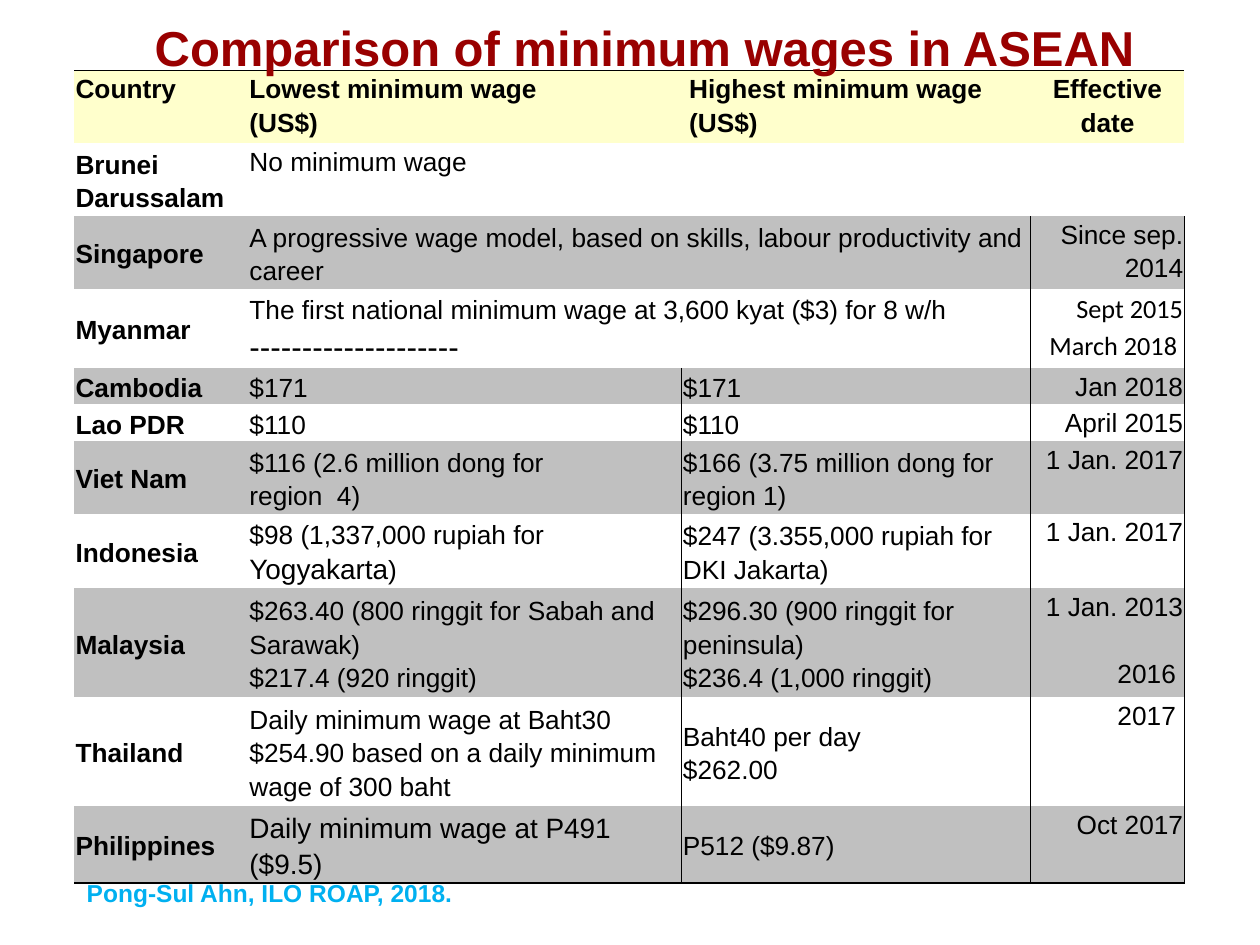
"""Build a slide that compares minimum wages across ASEAN countries."""
from dataclasses import dataclass
from typing import Any, Optional

import pptx
import pptx.dml.color
import pptx.enum.text
import pptx.oxml
import pptx.oxml.ns
import pptx.util

Pt = pptx.util.Pt
ALIGN = pptx.enum.text.PP_ALIGN
ANCHOR = pptx.enum.text.MSO_ANCHOR


@dataclass(frozen=True)
class Theme:
    """Colours, fonts and type sizes of the slide."""
    ink: str = "000000"
    title: str = "990000"
    source: str = "00B0F0"
    header: str = "FFFFCC"
    grey: str = "C0C0C0"
    white: str = "FFFFFF"
    font: str = "Arial"
    alternate_font: str = "Calibri"
    title_size: float = 28
    source_size: float = 14
    body_size: float = 15
    large_size: float = 16
    dash_size: float = 18


THEME = Theme()


@dataclass(frozen=True)
class Span:
    """A stretch of text with one size and font."""
    text: str
    size: float = THEME.body_size
    font: str = THEME.font


@dataclass(frozen=True)
class Line:
    """A paragraph made of spans."""
    spans: tuple[Span, ...]
    before: float = 0


@dataclass(frozen=True)
class Entry:
    """The lines of one table cell."""
    lines: tuple[Line, ...]
    anchor: Any = ANCHOR.MIDDLE


@dataclass(frozen=True)
class Row:
    """One country with its wages and effective date."""
    height: float
    name: str
    wages: tuple[Entry, ...]
    date: Optional[Entry]


def entry(*texts: str, anchor: Any = ANCHOR.MIDDLE, **style: Any) -> Entry:
    """Return an entry with one uniformly styled line per text."""
    return Entry(tuple(Line((Span(text, **style),)) for text in texts), anchor)


def date(*texts: str, **style: Any) -> Entry:
    """Return an entry set at the top of its cell."""
    return entry(*texts, anchor=ANCHOR.TOP, **style)


COLUMNS = (99.4, 247.7, 3.6, 195.8, 87.8)
TABLE_LEFT, TABLE_TOP = 42.5, 40.3
HEADER_COLUMNS = ((0, 0), (1, 2), (3, 3), (4, 4))
PAIRED_COLUMNS = ((0, 0), (1, 1), (2, 3), (4, 4))
JOINED_COLUMNS = ((0, 0), (1, 3), (4, 4))
HEADER_HEIGHT = 41.6
HEADERS = (entry("Country"), entry("Lowest minimum wage", "(US$)"),
           entry("Highest minimum wage (US$)"), entry("Effective date"))
ROWS = (
    Row(41.6, "Brunei Darussalam", (entry("No minimum wage", anchor=ANCHOR.TOP),), None),
    Row(41.6, "Singapore",
        (entry("A progressive wage model, based on skills, labour productivity and career"),),
        date("Since sep. 2014")),
    Row(45.2, "Myanmar",
        (Entry((Line((Span("The first national minimum wage at 3,600 kyat ($3) for 8 w/h"),)),
                Line((Span("--------------------", THEME.dash_size),)))),),
        date("Sept 2015", "March 2018\N{NO-BREAK SPACE}", font=THEME.alternate_font)),
    Row(20.9, "Cambodia", (entry("$171"), entry("$171")), date("Jan 2018")),
    Row(20.9, "Lao PDR", (entry("$110"), entry("$110")), date("April 2015")),
    Row(41.6, "Viet Nam",
        (entry("$116 (2.6 million dong for", "region  4)"),
         entry("$166 (3.75 million dong for region 1)")), date("1 Jan. 2017")),
    Row(42.6, "Indonesia",
        (Entry((Line((Span("$98 (1,337,000 rupiah for "),
                      Span("Yogyakarta", THEME.large_size), Span(")"))),)),
         entry("$247 (3.355,000 rupiah for DKI Jakarta)")), date("1 Jan. 2017")),
    Row(62.2, "Malaysia",
        (entry("$263.40 (800 ringgit for Sabah and Sarawak)", "$217.4 (920 ringgit)"),
         entry("$296.30 (900 ringgit for peninsula)", "$236.4 (1,000 ringgit)")),
        Entry((Line((Span("1 Jan. 2013"),)), Line((Span("2016 "),), 19.2)), ANCHOR.TOP)),
    Row(62.2, "Thailand",
        (entry("Daily minimum wage at Baht30",
               "$254.90 based on a daily minimum wage of 300 baht"),
         entry("Baht40 per day", "$262.00")), date("2017 ")),
    Row(43.9, "Philippines",
        (entry("Daily minimum wage at P491 ($9.5)", size=THEME.large_size),
         entry("P512 ($9.87)")), date("Oct 2017")),
)


def apply(target: Any, values: dict[str, Any]) -> None:
    """Set each named attribute of the target."""
    for name, value in values.items():
        setattr(target, name, value)


def write_line(para: Any, line: Line, color: str, bold: bool, align: Any, spacing: float) -> None:
    """Write one line into a paragraph."""
    apply(para, {"alignment": align, "line_spacing": spacing, "space_before": Pt(line.before)})
    for part in line.spans:
        span = para.add_run()
        span.text = part.text
        apply(span.font, {"size": Pt(part.size), "name": part.font, "bold": bold})
        span.font.color.rgb = pptx.dml.color.RGBColor.from_string(color)


def add_borders(cell: Any, sides: str) -> None:
    """Draw one-point borders on the named sides, ordered L, R, T, B."""
    properties = cell._tc.get_or_add_tcPr()
    for position, side in enumerate(sides):
        border = pptx.oxml.parse_xml(
            f'<a:ln{side} {pptx.oxml.ns.nsdecls("a")} w="{Pt(1)}"><a:solidFill>'
            f'<a:srgbClr val="{THEME.ink}"/></a:solidFill></a:ln{side}>')
        properties.insert(position, border)


def fill_cell(cell: Any, content: Optional[Entry], fill: str, bold: bool,
              align: Any, anchor: Any, sides: str) -> None:
    """Format a cell and write its content."""
    apply(cell, {"margin_left": Pt(0.7), "margin_right": Pt(0.7), "margin_top": Pt(0),
                 "margin_bottom": Pt(0), "vertical_anchor": anchor})
    cell.fill.solid()
    cell.fill.fore_color.rgb = pptx.dml.color.RGBColor.from_string(fill)
    add_borders(cell, sides)
    for index, line in enumerate(content.lines if content else ()):
        para = cell.text_frame.add_paragraph() if index else cell.text_frame.paragraphs[0]
        write_line(para, line, THEME.ink, bold, align, 1.15)


def merge_cell(table: Any, row: int, first: int, last: int) -> Any:
    """Return the cell that covers the columns from first to last."""
    cell = table.cell(row, first)
    if last > first:
        cell.merge(table.cell(row, last))
    return cell


def add_wage_table(page: Any) -> Any:
    """Add the wage table and return its frame."""
    heights = (HEADER_HEIGHT, *(row.height for row in ROWS))
    frame = page.shapes.add_table(len(heights), len(COLUMNS), Pt(TABLE_LEFT), Pt(TABLE_TOP),
                                  Pt(sum(COLUMNS)), Pt(sum(heights)))
    table = frame.table
    apply(table, {"first_row": False, "horz_banding": False})
    style = table._tbl.tblPr.find(pptx.oxml.ns.qn("a:tableStyleId"))
    style.text = "{2D5ABB26-0587-4C30-8999-92F81FD0307C}"
    for column, width in zip(table.columns, COLUMNS):
        column.width = Pt(width)
    for line, height in zip(table.rows, heights):
        line.height = Pt(height)
    for (first, last), content in zip(HEADER_COLUMNS, HEADERS):
        align = ALIGN.CENTER if first == 4 else ALIGN.LEFT
        fill_cell(merge_cell(table, 0, first, last), content, THEME.header, True,
                  align, ANCHOR.TOP, "T")
    for number, row in enumerate(ROWS, 1):
        fill = THEME.white if number % 2 else THEME.grey
        columns = PAIRED_COLUMNS if len(row.wages) == 2 else JOINED_COLUMNS
        bottom = "B" if number == len(ROWS) else ""
        for (first, last), content in zip(columns, (entry(row.name), *row.wages, row.date)):
            left = "L" if first > 1 and row.date else ""
            right = "R" if 0 < first < 4 and row.date else ""
            fill_cell(merge_cell(table, number, first, last), content, fill, first == 0,
                      ALIGN.RIGHT if first == 4 else ALIGN.LEFT,
                      content.anchor if content else ANCHOR.TOP, left + right + bottom)
    return frame


def write_heading(box: Any, text: str, size: float, color: str, align: Any) -> None:
    """Write one bold line at the top of a box."""
    apply(box.text_frame, {"word_wrap": True, "vertical_anchor": ANCHOR.TOP,
                           "auto_size": pptx.enum.text.MSO_AUTO_SIZE.NONE})
    write_line(box.text_frame.paragraphs[0], Line((Span(text, size),)), color, True, align, 0.93)


def main() -> None:
    """Build and save the deck."""
    deck = pptx.Presentation()
    apply(deck, {"slide_width": Pt(720), "slide_height": Pt(540)})
    page = deck.slides.add_slide(deck.slide_layouts[5])
    frame = add_wage_table(page)
    title = page.shapes.title
    apply(title, {"left": Pt(18), "top": Pt(9.4), "width": Pt(700.6), "height": Pt(54.7)})
    write_heading(title, "Comparison of minimum wages in ASEAN", THEME.title_size,
                  THEME.title, ALIGN.CENTER)
    frame.element.addnext(title.element)
    box = page.shapes.add_textbox(Pt(TABLE_LEFT), Pt(499.7), Pt(544.3), Pt(40))
    write_heading(box, "Pong-Sul Ahn, ILO ROAP, 2018.", THEME.source_size,
                  THEME.source, ALIGN.LEFT)
    deck.save("out.pptx")


if __name__ == "__main__":
    main()
